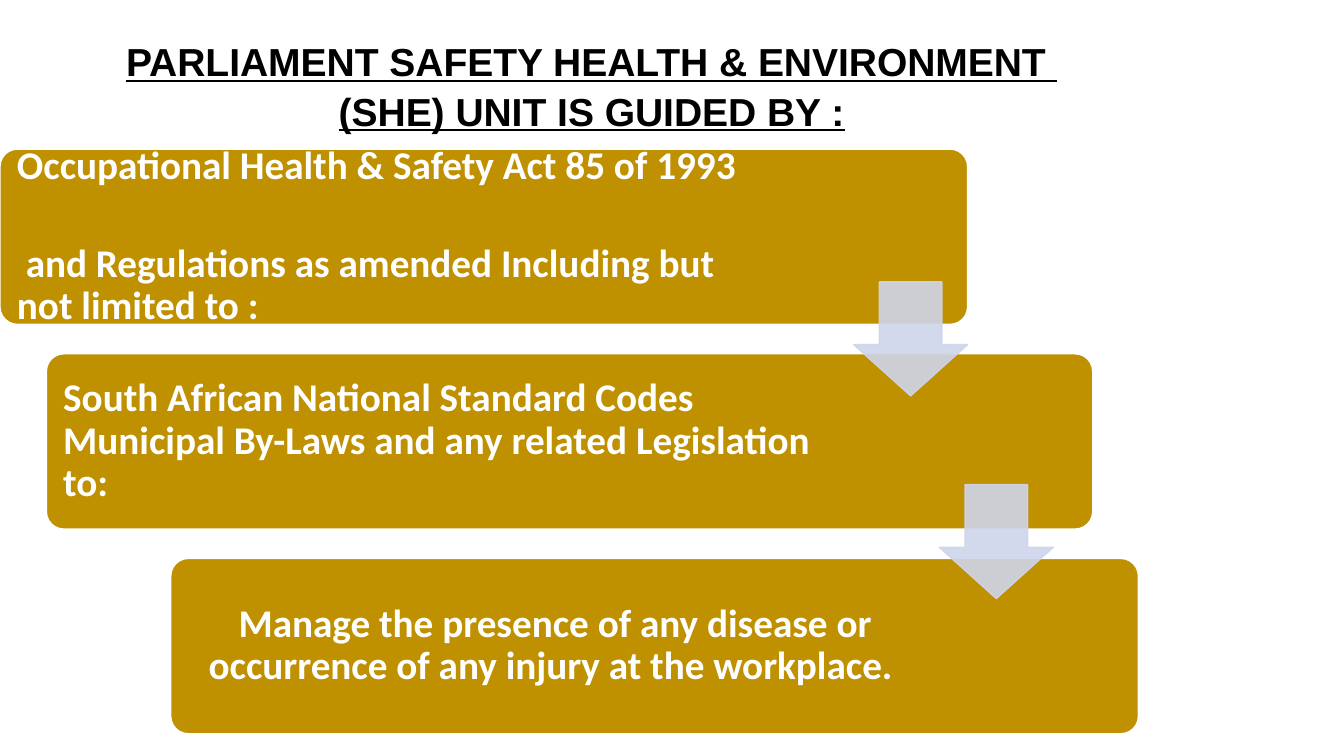
from lxml import etree
from pptx import Presentation
from pptx.dml.color import RGBColor
from pptx.enum.shapes import MSO_SHAPE
from pptx.enum.text import MSO_ANCHOR, MSO_AUTO_SIZE, PP_ALIGN
from pptx.oxml.ns import qn
from pptx.util import Pt

ROUNDED = MSO_SHAPE.ROUNDED_RECTANGLE
DOWN_ARROW = MSO_SHAPE.DOWN_ARROW
MIDDLE = MSO_ANCHOR.MIDDLE
NO_AUTOFIT = MSO_AUTO_SIZE.NONE
LEFT, CENTER = PP_ALIGN.LEFT, PP_ALIGN.CENTER

GOLD = RGBColor(0xBF, 0x90, 0x00)
LAVENDER = RGBColor(0xCF, 0xD5, 0xEA)
WHITE = RGBColor(0xFF, 0xFF, 0xFF)
BLACK = RGBColor(0x00, 0x00, 0x00)

TITLE = "PARLIAMENT SAFETY HEALTH & ENVIRONMENT \v(SHE) UNIT IS GUIDED BY :"
STEP_TOP, STEP_HEIGHT, STEP_PITCH = 106.5, 125.2, 146.2
TEXT_MARGIN = 3.7
ARROW_SIZE = 81.4

STEPS = [
    (0, 691.2, 555.8, LEFT,
     "Occupational Health & Safety Act 85 of 1993\n"
     " and Regulations as amended Including but not limited to :"),
    (33.1, 747.4, 586.1, LEFT,
     "South African National Standard Codes Municipal By-Laws "
     "and any related Legislation to:"),
    (122, 691.2, 541.4, CENTER,
     "Manage the presence of any disease or occurrence of any injury "
     "at the workplace. "),
]
ARROWS = [(609.8, 201.4), (671, 346.2)]


def style_font(font, name, size, color):
    font.name = name
    font.size = Pt(size)
    font.bold = True
    font.color.rgb = color


def add_title(slide, left, top, width, height):
    title = slide.shapes.title
    title.left, title.top = Pt(left), Pt(top)
    title.width, title.height = Pt(width), Pt(height)
    frame = title.text_frame
    frame.text = TITLE
    frame.word_wrap = True
    frame.auto_size = NO_AUTOFIT
    frame.vertical_anchor = MIDDLE
    heading = frame.paragraphs[0]
    heading.alignment = CENTER
    heading.line_spacing = 1.05
    for run in heading.runs:
        style_font(run.font, "Arial", 27.9, BLACK)
        run.font.underline = True


def add_panel(slide, preset, left, top, width, height, adjustments, fill, line):
    panel = slide.shapes.add_shape(preset, Pt(left), Pt(top), Pt(width), Pt(height))
    for index, value in enumerate(adjustments):
        panel.adjustments[index] = value
    panel.shadow.inherit = False
    panel.fill.solid()
    panel.fill.fore_color.rgb = fill
    panel.line.color.rgb = line
    panel.line.width = Pt(1)
    return panel


def add_step(slide, left, top, width, text_width, alignment, wording):
    add_panel(slide, ROUNDED, left, top, width, STEP_HEIGHT, [0.1], GOLD, WHITE)
    label = slide.shapes.add_textbox(
        Pt(left + TEXT_MARGIN), Pt(top + TEXT_MARGIN),
        Pt(text_width), Pt(STEP_HEIGHT - 2 * TEXT_MARGIN))
    frame = label.text_frame
    frame.word_wrap = True
    frame.vertical_anchor = MIDDLE
    frame.margin_left = frame.margin_right = Pt(8.4)
    frame.margin_top = frame.margin_bottom = Pt(8.4)
    frame.text = wording
    for paragraph in frame.paragraphs:
        paragraph.alignment = alignment
        paragraph.line_spacing = 0.9
        for run in paragraph.runs:
            style_font(run.font, "Calibri", 28, WHITE)
    for paragraph in frame.paragraphs[:-1]:
        paragraph.space_after = Pt(40)


def add_arrow(slide, left, top):
    arrow = add_panel(slide, DOWN_ARROW, left, top, ARROW_SIZE, ARROW_SIZE,
                      [0.55, 0.45], LAVENDER, LAVENDER)
    for color in arrow._element.spPr.iter(qn("a:srgbClr")):
        etree.SubElement(color, qn("a:alpha"), val="90000")


def build_guidance_slide(presentation):
    slide = presentation.slides.add_slide(presentation.slide_layouts[5])
    add_title(slide, 0, 27.4, 845.3, 66.2)
    for index, (left, width, text_width, alignment, wording) in enumerate(STEPS):
        add_step(slide, left, STEP_TOP + index * STEP_PITCH, width,
                 text_width, alignment, wording)
    for left, top in ARROWS:
        add_arrow(slide, left, top)


def main():
    presentation = Presentation()
    presentation.slide_width = Pt(960)
    presentation.slide_height = Pt(540)
    build_guidance_slide(presentation)
    presentation.save("out.pptx")


if __name__ == "__main__":
    main()
